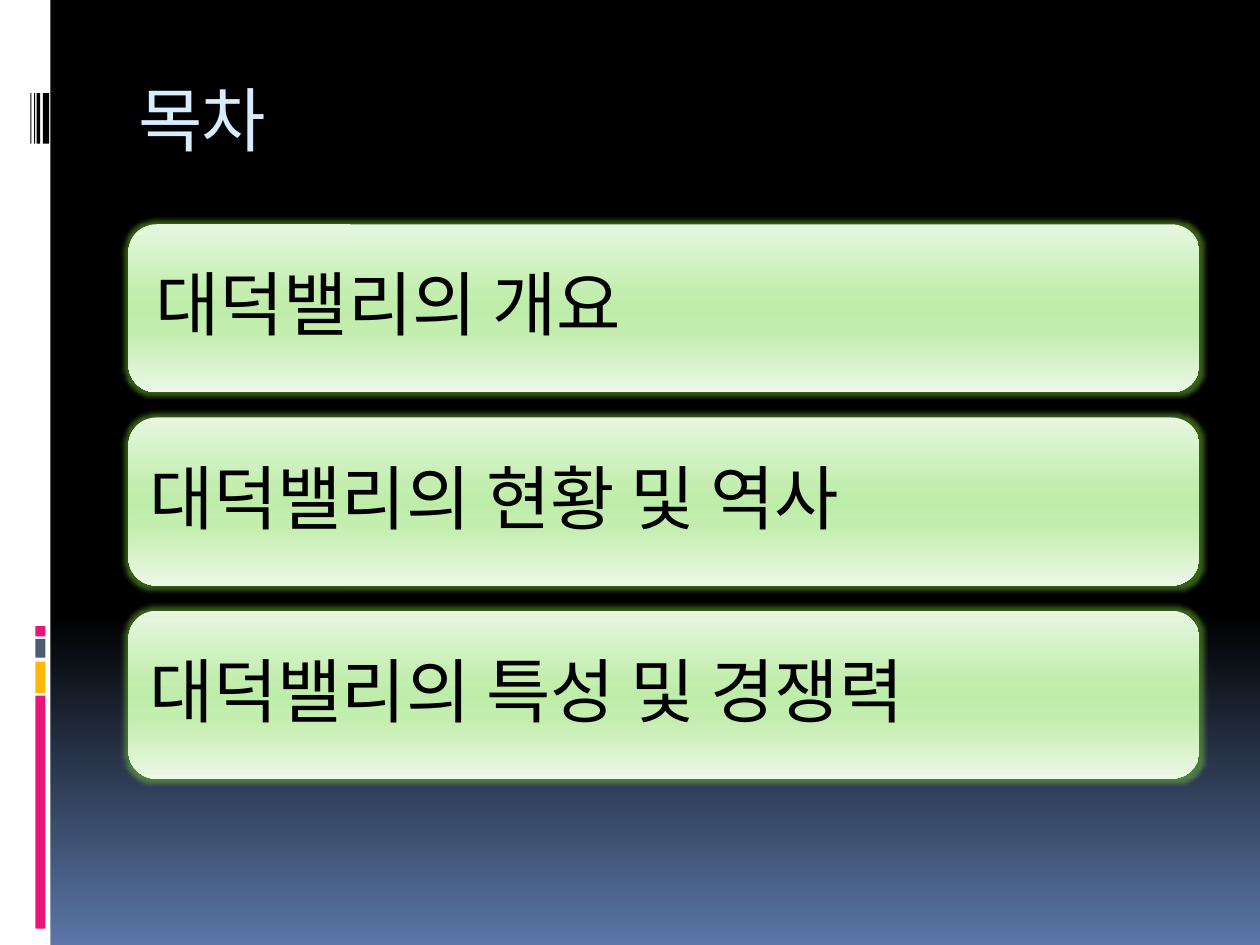
import dataclasses

import lxml.etree
import pptx
import pptx.dml.color
import pptx.enum.shapes
import pptx.enum.text
import pptx.oxml.ns
import pptx.util

Inches = pptx.util.Inches
Pt = pptx.util.Pt
RGB = pptx.dml.color.RGBColor.from_string
SHAPES = pptx.enum.shapes.MSO_SHAPE
ANCHOR = pptx.enum.text.MSO_ANCHOR
ALIGN = pptx.enum.text.PP_ALIGN
qn = pptx.oxml.ns.qn


@dataclasses.dataclass(frozen=True)
class Theme:
    rail: str = "FFFFFF"
    pink: str = "EA157A"
    amber: str = "FEB80A"
    slate: str = "4E5B6F"
    ink: str = "000000"
    title: str = "D6ECFF"
    glow: str = "7FD13B"
    backdrop: tuple = ((0, "000000"), (65, "000000"), (100, "5B77A8"))
    card: tuple = ((0, "E6F7E0"), (40, "C4EEB0"), (50, "BEEDA9"),
                   (65, "C4EEB0"), (100, "ECF8E6"))
    title_font: str = "Noto Sans Mono"
    body_font: str = "Calibri"
    large: int = 40
    small: int = 28


THEME = Theme()


def apply(target, values):
    for name, value in values.items():
        setattr(target, name, value)


def add_xml(parent, tag, **attributes):
    return lxml.etree.SubElement(parent, qn(tag), attributes)


def fill_gradient(fill, element, stops):
    fill.gradient()
    fill.gradient_angle = 270
    stop_list = element.find(".//" + qn("a:gsLst"))
    for stop in list(stop_list):
        stop_list.remove(stop)
    for percent, colour in stops:
        stop = add_xml(stop_list, "a:gs", pos=str(percent * 1000))
        add_xml(stop, "a:srgbClr", val=colour)


def add_glow(shape, colour, radius, opacity):
    effects = shape.element.spPr.find(qn("a:effectLst"))
    glow = add_xml(effects, "a:glow", rad=str(radius))
    tint = add_xml(glow, "a:srgbClr", val=colour)
    add_xml(tint, "a:alpha", val=str(opacity * 1000))


def add_panel(slide, kind, box):
    panel = slide.shapes.add_shape(kind, *map(Inches, box))
    panel.shadow.inherit = False
    panel.line.fill.background()
    return panel


def add_run(paragraph, text, size, font, colour):
    run = paragraph.add_run()
    run.text = text
    apply(run.font, {"size": Pt(size), "name": font})
    run.font.color.rgb = RGB(colour)
    return run


def add_side_rail(slide, box):
    left, top, width, height = box
    blocks = [(0, 0, width, height, THEME.rail)]
    blocks += [(0.28, y, 0.08, h, colour) for y, h, colour in (
        (5.52, 1.85, THEME.pink), (5.25, 0.25, THEME.amber),
        (5.07, 0.15, THEME.slate), (4.97, 0.08, THEME.pink))]
    blocks += [(x, 0.74, w, 0.4, THEME.ink) for x, w in (
        (0.34, 0.05), (0.29, 0.03), (0.27, 0.01), (0.24, 0.01))]
    for x, y, w, h, colour in blocks:
        block = add_panel(slide, SHAPES.RECTANGLE, (left + x, top + y, w, h))
        block.fill.solid()
        block.fill.fore_color.rgb = RGB(colour)


def place_title(slide, box, text):
    title = slide.shapes.title
    apply(title, dict(zip(("left", "top", "width", "height"), map(Inches, box))))
    apply(title.text_frame, {"vertical_anchor": ANCHOR.TOP, "word_wrap": True})
    heading = title.text_frame.paragraphs[0]
    heading.alignment = ALIGN.LEFT
    run = add_run(heading, text, THEME.large, THEME.title_font, THEME.title)
    run.font._element.set("spc", "-100")


def add_topic_card(slide, box, pieces, inset):
    card = add_panel(slide, SHAPES.ROUNDED_RECTANGLE, box)
    fill_gradient(card.fill, card.element, THEME.card)
    add_glow(card, THEME.glow, Pt(5), 45)
    frame = card.text_frame
    apply(frame, {"word_wrap": True, "vertical_anchor": ANCHOR.MIDDLE})
    apply(frame, {f"margin_{side}": Inches(inset)
                  for side in ("left", "top", "right", "bottom")})
    topic = frame.paragraphs[0]
    apply(topic, {"alignment": ALIGN.LEFT, "line_spacing": 0.9})
    for text, size in pieces:
        add_run(topic, text, size, THEME.body_font, THEME.ink)


def add_topics(slide, box, topics, gap):
    left, top, width, height = box
    card_height = (height - gap * (len(topics) - 1)) / len(topics)
    for index, (pieces, inset) in enumerate(topics):
        y = top + index * (card_height + gap)
        add_topic_card(slide, (left, y, width, card_height), pieces, inset)


def main():
    deck = pptx.Presentation()
    apply(deck, {"slide_width": Inches(10), "slide_height": Inches(7.5)})
    slide = deck.slides.add_slide(deck.slide_layouts[5])
    fill_gradient(slide.background.fill, slide.element, THEME.backdrop)
    add_side_rail(slide, (0, 0, 0.4, 7.5))
    place_title(slide, (1, 0.56, 8.5, 1), "목차")
    topics = [
        ([(" ", THEME.small), ("대덕밸리의 개요", THEME.large)], 0.06),
        ([("대덕밸리의 현황 및 역사", THEME.large)], 0.1),
        ([("대덕밸리의 특성 및 경쟁력", THEME.large)], 0.1),
    ]
    add_topics(slide, (1.02, 1.78, 8.5, 4.4), topics, 0.2)
    deck.save("out.pptx")


if __name__ == "__main__":
    main()
